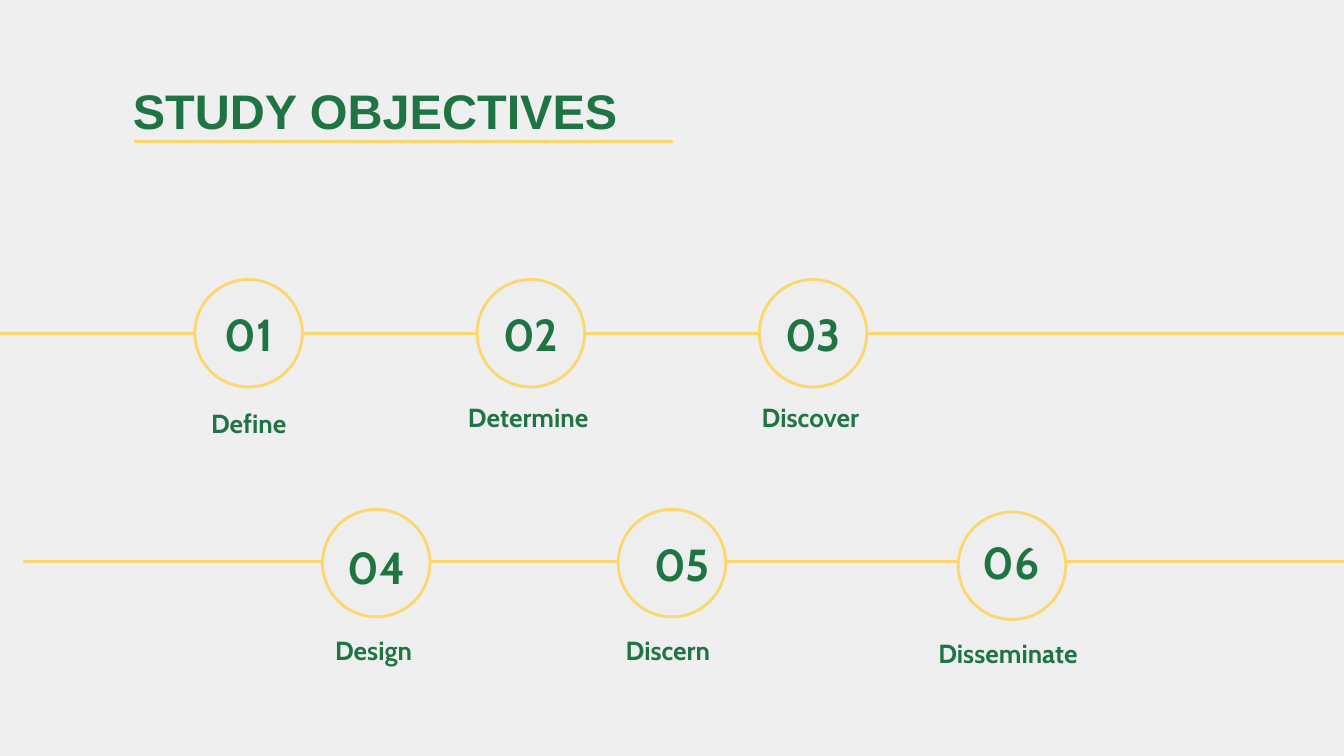
from dataclasses import dataclass

from lxml.etree import SubElement
from pptx import Presentation
from pptx.dml.color import RGBColor
from pptx.enum.shapes import MSO_CONNECTOR as CONN, MSO_SHAPE as SHAPE
from pptx.enum.text import MSO_ANCHOR as ANCHOR, PP_ALIGN as ALIGN
from pptx.oxml.ns import qn
from pptx.slide import Slide
from pptx.util import Inches, Pt

WIDTH, HEIGHT = Inches(10), Inches(5.625)
COL, ROW = WIDTH / 100, HEIGHT / 56.25


@dataclass(frozen=True)
class Theme:
    background: RGBColor = RGBColor(0xEF, 0xEF, 0xEF)
    ring: RGBColor = RGBColor(0xEE, 0xEE, 0xEE)
    yellow: RGBColor = RGBColor(0xFB, 0xD7, 0x6D)
    green: RGBColor = RGBColor(0x1F, 0x74, 0x44)
    title_font: str = "Arial"
    body_font: str = "Cabin"
    title_size: float = 26
    number_size: float = 24
    label_size: float = 14
    line_width: float = 1.5


@dataclass(frozen=True)
class Rule:
    start: float
    end: float
    row: float


@dataclass(frozen=True)
class Step:
    label: str
    ring_col: float
    ring_row: float
    number_col: float
    number_row: float
    label_col: float
    label_row: float


THEME = Theme()
RING = 8
TEXT_COLS, NUMBER_ROWS, LABEL_ROWS = 18.5, 5.5, 6.3

TITLE_RULE = Rule(10, 50.1, 10.5)
TIMELINES = [Rule(-0.2, 100.2, 24.8), Rule(1.7, 102, 41.8)]
STEPS = [
    Step("Define", 18.5, 24.8, 18.5, 24.85, 18.5, 29.3),
    Step("Determine", 39.5, 24.8, 39.5, 24.85, 39.3, 28.9),
    Step("Discover", 60.5, 24.8, 60.5, 24.85, 60.3, 28.9),
    Step("Design", 28, 41.9, 28, 42.15, 27.8, 46.2),
    Step("Discern", 50, 41.9, 50.75, 41.95, 49.7, 46.2),
    Step("Disseminate", 75.3, 42.1, 75.25, 41.75, 75, 46.4),
]


def grid(left: float, top: float, cols: float, rows: float) -> tuple[int, ...]:
    return int(left * COL), int(top * ROW), int(cols * COL), int(rows * ROW)


def draw_rule(s: Slide, rule: Rule) -> None:
    x1, y, x2, _ = grid(rule.start, rule.row, rule.end, 0)
    line = s.shapes.add_connector(CONN.STRAIGHT, x1, y, x2, y)
    line.line.color.rgb = THEME.yellow
    line.line.width = Pt(THEME.line_width)
    SubElement(line._element.spPr, qn("a:effectLst"))


def draw_text(s: Slide, text: str, box: tuple[int, ...], size: float,
              font: str = THEME.body_font, align: ALIGN = ALIGN.CENTER,
              anchor: ANCHOR = ANCHOR.TOP) -> None:
    tf = s.shapes.add_textbox(*box).text_frame
    tf.word_wrap = True
    tf.vertical_anchor = anchor
    tf.margin_left = tf.margin_right = Inches(0.1)
    tf.margin_top = tf.margin_bottom = Inches(0.1)
    tf.text = text
    p = tf.paragraphs[0]
    p.alignment = align
    r = p.runs[0]
    r.font.name = font
    r.font.size = Pt(size)
    r.font.bold = True
    r.font.color.rgb = THEME.green


def draw_step(s: Slide, number: int, step: Step) -> None:
    sp = s.shapes.add_shape(SHAPE.OVAL, *grid(
        step.ring_col - RING / 2, step.ring_row - RING / 2, RING, RING))
    sp.shadow.inherit = False
    sp.fill.solid()
    sp.fill.fore_color.rgb = THEME.ring
    sp.line.color.rgb = THEME.yellow
    sp.line.width = Pt(THEME.line_width)
    number_box = grid(step.number_col - TEXT_COLS / 2,
                      step.number_row - NUMBER_ROWS / 2, TEXT_COLS, NUMBER_ROWS)
    draw_text(s, f"{number:02}", number_box, THEME.number_size, anchor=ANCHOR.MIDDLE)
    label_box = grid(step.label_col - TEXT_COLS / 2, step.label_row,
                     TEXT_COLS, LABEL_ROWS)
    draw_text(s, step.label, label_box, THEME.label_size)


def main() -> None:
    prs = Presentation()
    prs.slide_width, prs.slide_height = WIDTH, HEIGHT
    s = prs.slides.add_slide(prs.slide_layouts[6])
    s.background.fill.solid()
    s.background.fill.fore_color.rgb = THEME.background
    for rule in (TITLE_RULE, *TIMELINES):
        draw_rule(s, rule)
    draw_text(s, "STUDY OBJECTIVES", grid(8.9, 5, 82.1, 6.2), THEME.title_size,
              THEME.title_font, ALIGN.LEFT)
    for number, step in enumerate(STEPS, 1):
        draw_step(s, number, step)
    prs.save("out.pptx")


if __name__ == "__main__":
    main()
